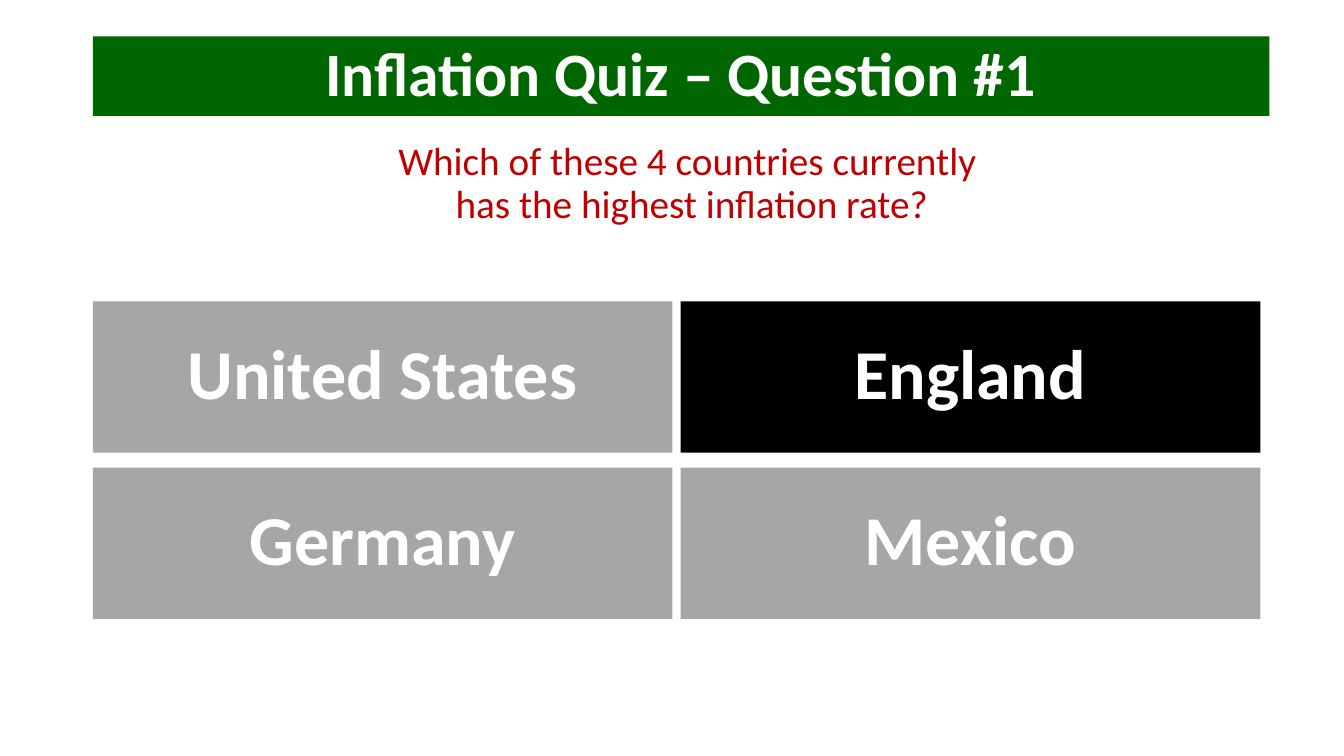
from dataclasses import dataclass

from pptx import Presentation
from pptx.dml.color import RGBColor
from pptx.enum.shapes import MSO_SHAPE as Preset
from pptx.enum.text import MSO_ANCHOR as Anchor, MSO_AUTO_SIZE as AutoSize, PP_ALIGN as Align
from pptx.shapes.autoshape import Shape
from pptx.slide import Slide
from pptx.util import Inches, Pt

GREEN = RGBColor(0x00, 0x66, 0x00)
RED = RGBColor(0xC0, 0x00, 0x00)
GRAY = RGBColor(0xA6, 0xA6, 0xA6)
BLACK = RGBColor(0x00, 0x00, 0x00)
WHITE = RGBColor(0xFF, 0xFF, 0xFF)

FONT = "Calibri"
LEFT = 0.92
TILE_TOP = 2.99
TILE_WIDTH, TILE_HEIGHT = 5.75, 1.5
COLUMN_GAP, ROW_GAP = 0.08, 0.15
TITLE_ONLY = 5


@dataclass
class Answer:
    country: str
    row: int
    column: int
    fill: RGBColor = GRAY


ANSWERS = [
    Answer("United States", 0, 0),
    Answer("Germany", 1, 0),
    Answer("England", 0, 1, BLACK),
    Answer("Mexico", 1, 1),
]


def write(box: Shape, text: str, size: float, color: RGBColor,
          bold: bool = False, anchor: Anchor = Anchor.MIDDLE) -> None:
    frame = box.text_frame
    frame.word_wrap = True
    frame.auto_size = AutoSize.NONE
    frame.vertical_anchor = anchor
    para = frame.paragraphs[0]
    para.text = text
    para.alignment = Align.CENTER
    para.line_spacing = 0.9
    for span in para.runs:
        span.font.name = FONT
        span.font.size = Pt(size)
        span.font.bold = bold
        span.font.color.rgb = color


def fill_box(box: Shape, color: RGBColor) -> None:
    box.fill.solid()
    box.fill.fore_color.rgb = color
    box.line.fill.background()


def add_title(page: Slide) -> None:
    title = page.shapes.title
    title.left, title.top = Inches(LEFT), Inches(0.36)
    title.width, title.height = Inches(11.67), Inches(0.79)
    fill_box(title, GREEN)
    write(title, "Inflation Quiz – Question #1", 44, WHITE, bold=True)


def add_question(page: Slide) -> None:
    box = page.shapes.add_textbox(Inches(LEFT), Inches(1.36), Inches(11.88), Inches(5.4))
    write(box, "Which of these 4 countries currently \vhas the highest inflation rate?",
          28, RED, anchor=Anchor.TOP)


def add_answer(page: Slide, answer: Answer) -> None:
    left = LEFT + answer.column * (TILE_WIDTH + COLUMN_GAP)
    top = TILE_TOP + answer.row * (TILE_HEIGHT + ROW_GAP)
    tile = page.shapes.add_shape(Preset.RECTANGLE, Inches(left), Inches(top),
                                 Inches(TILE_WIDTH), Inches(TILE_HEIGHT))
    tile.shadow.inherit = False
    fill_box(tile, answer.fill)
    write(tile, answer.country, 50, WHITE, bold=True)


def main() -> None:
    deck = Presentation()
    deck.slide_width, deck.slide_height = Inches(13.33), Inches(7.5)
    page = deck.slides.add_slide(deck.slide_layouts[TITLE_ONLY])

    # Heading and question
    add_title(page)
    add_question(page)

    # Grid of answers
    for answer in ANSWERS:
        add_answer(page, answer)

    deck.save("out.pptx")


if __name__ == "__main__":
    main()
